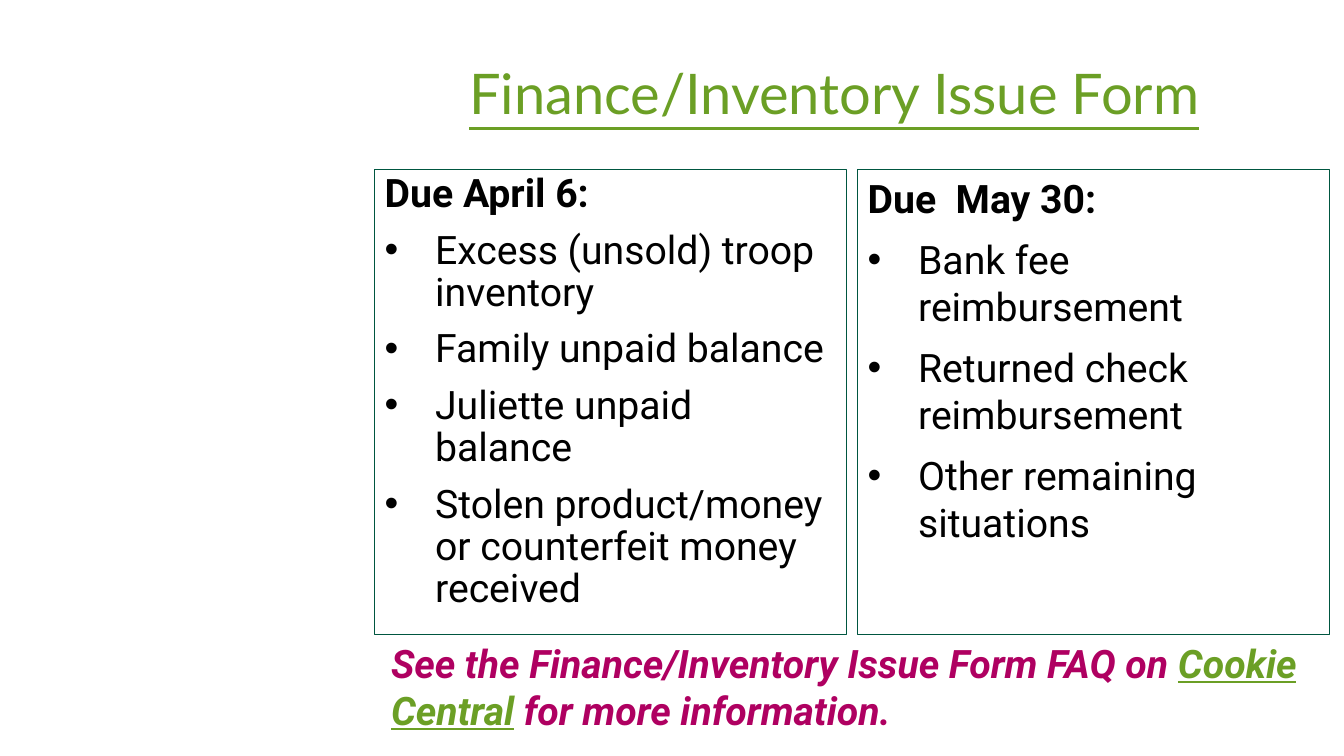
from dataclasses import dataclass

from lxml import etree
from pptx import Presentation
from pptx.dml.color import RGBColor
from pptx.enum.shapes import MSO_SHAPE
from pptx.enum.text import MSO_ANCHOR, PP_ALIGN
from pptx.oxml.ns import qn
from pptx.util import Emu, Pt

RECT = MSO_SHAPE.RECTANGLE
TOP, MIDDLE = MSO_ANCHOR.TOP, MSO_ANCHOR.MIDDLE
LEFT, CENTER = PP_ALIGN.LEFT, PP_ALIGN.CENTER

SCALE = 9525  # EMU in one px, 96 px to the inch
WIDE, HIGH = 1280, 720
CARD_X, CARD_Y, CARD_W, CARD_H, CARD_GAP = 357, 161, 449, 443, 11


@dataclass(frozen=True)
class Theme:
    green: str = "6B9F25"
    border: str = "005640"
    black: str = "000000"
    pink: str = "AF0061"
    head: str = "Lato"
    body: str = "Roboto"
    title: int = 40
    text: int = 28
    gap: int = 10


THEME = Theme()

CARDS = [
    ("Due April 6:", 0.9, [
        "Excess (unsold) troop inventory",
        "Family unpaid balance",
        "Juliette unpaid balance",
        "Stolen product/money or counterfeit money received",
    ]),
    ("Due  May 30:", 1.0, [
        "Bank fee reimbursement",
        "Returned check reimbursement",
        "Other remaining situations",
    ]),
]


def px(n):
    return Emu(n * SCALE)


def add_run(para, text, color, size=THEME.text, face=THEME.body,
            bold=False, italic=False, under=False):
    run = para.add_run()
    run.text = text
    font = run.font
    font.name, font.size = face, Pt(size)
    font.bold, font.italic, font.underline = bold, italic, under
    font.color.rgb = RGBColor.from_string(color)


def set_indent(para, hang, bullet=None):
    """Set a hanging indent in px, with a bullet if one is given."""
    props = para._p.get_or_add_pPr()
    props.set("marL", str(px(hang)))
    props.set("indent", str(px(-hang)))
    if bullet:
        font = etree.SubElement(props, qn("a:buFont"))
        font.set("typeface", "Arial")
        etree.SubElement(props, qn("a:buChar")).set("char", bullet)


def add_title(slide, text):
    title = slide.shapes.title
    title.left, title.top = px(364), px(22)
    title.width, title.height = px(861), px(139)
    frame = title.text_frame
    frame.word_wrap = True
    frame.vertical_anchor = MIDDLE
    para = frame.paragraphs[0]
    para.alignment, para.line_spacing = CENTER, 0.9
    add_run(para, text, THEME.green, THEME.title, THEME.head, under=True)


def add_card(slide, x, due, pitch, items):
    card = slide.shapes.add_shape(RECT, px(x), px(CARD_Y), px(CARD_W), px(CARD_H))
    card.shadow.inherit = False
    card.fill.background()
    card.line.color.rgb = RGBColor.from_string(THEME.border)
    card.line.width = Pt(0.75)
    frame = card.text_frame
    frame.word_wrap = True
    frame.vertical_anchor = TOP
    para = frame.paragraphs[0]
    set_indent(para, 24)
    para.alignment, para.line_spacing = LEFT, pitch
    add_run(para, due, THEME.black, bold=True)
    for item in items:
        para = frame.add_paragraph()
        set_indent(para, 48, "•")
        para.alignment, para.line_spacing = LEFT, pitch
        para.space_before = Pt(THEME.gap)
        add_run(para, item, THEME.black)


def add_note(slide, parts):
    """Add the closing note; parts are (text, color, underline)."""
    box = slide.shapes.add_textbox(px(363), px(604), px(903), px(100))
    box.text_frame.word_wrap = True
    para = box.text_frame.paragraphs[0]
    for text, color, under in parts:
        add_run(para, text, color, bold=True, italic=True, under=under)


def main():
    deck = Presentation()
    deck.slide_width, deck.slide_height = px(WIDE), px(HIGH)
    slide = deck.slides.add_slide(deck.slide_layouts[5])
    add_title(slide, "Finance/Inventory Issue Form")
    for i, (due, pitch, items) in enumerate(CARDS):
        add_card(slide, CARD_X + i * (CARD_W + CARD_GAP), due, pitch, items)
    add_note(slide, [
        ("See the Finance/Inventory Issue Form FAQ on ", THEME.pink, False),
        ("Cookie Central", THEME.green, True),
        (" for more information.", THEME.pink, False),
    ])
    deck.save("out.pptx")


if __name__ == "__main__":
    main()
